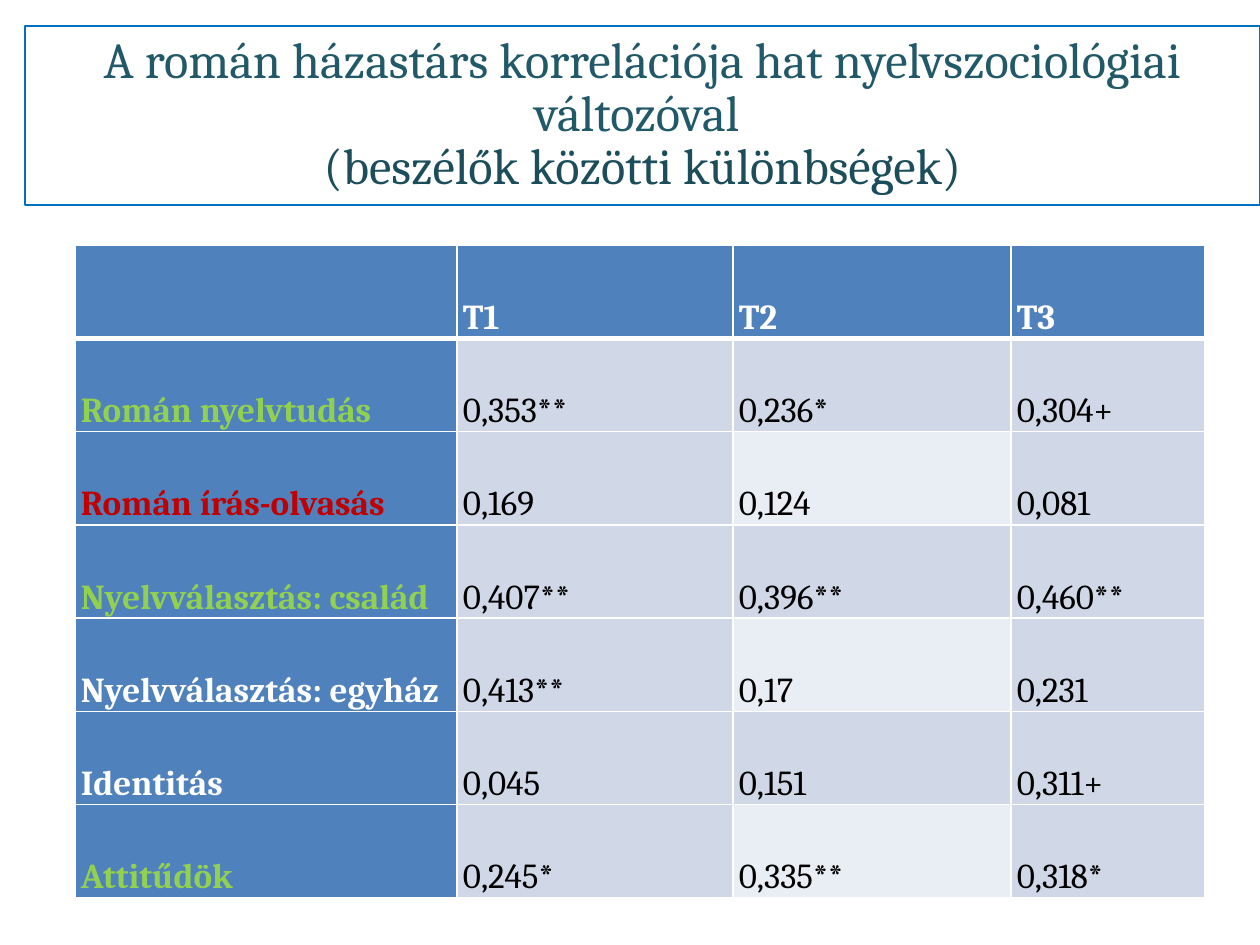
import pptx
import pptx.dml.color
import pptx.enum.text
import pptx.oxml
import pptx.oxml.ns
import pptx.util

SCALE = 914400 / 126
FONT = "Cambria"
COLORS = {
    "title": "215968", "subtitle": "1C4D5A", "outline": "0070C0",
    "head": "4F81BD", "band": "D0D8E8", "light": "E9EDF4",
    "white": "FFFFFF", "black": "000000", "green": "92D050", "red": "C00000",
}
TITLE = ("A román házastárs korrelációja hat nyelvszociológiai változóval ",
         "(beszélők közötti különbségek)")
COLUMN_WIDTHS = (382, 276, 278, 194)
HEADINGS = ("", "T1", "T2", "T3")
CORRELATIONS = (
    ("Román nyelvtudás", "green", "0,353**", "0,236*", "0,304+"),
    ("Román írás-olvasás", "red", "0,169", "0,124", "0,081"),
    ("Nyelvválasztás: család", "green", "0,407**", "0,396**", "0,460**"),
    ("Nyelvválasztás: egyház", "white", "0,413**", "0,17", "0,231"),
    ("Identitás", "white", "0,045", "0,151", "0,311+"),
    ("Attitűdök", "green", "0,245*", "0,335**", "0,318*"),
)
LIGHT_ROWS = (2, 4, 6)


def px(length):
    """Turn a length in px into EMU."""
    return pptx.util.Emu(round(length * SCALE))


def color(name):
    """Look up a named colour."""
    return pptx.dml.color.RGBColor.from_string(COLORS[name])


def assign(target, values):
    """Set each attribute of the target from a dict."""
    for name, value in values.items():
        setattr(target, name, value)


def add_span(para, text, size, shade, bold=False):
    """Append one formatted run to a paragraph."""
    span = para.add_run()
    span.text = text
    assign(span.font, {"name": FONT, "size": pptx.util.Pt(size), "bold": bold})
    span.font.color.rgb = color(shade)


def place_title(page, left, top, width, height):
    """Fill and outline the title placeholder."""
    box = page.shapes.title
    assign(box, {"left": px(left), "top": px(top),
                 "width": px(width), "height": px(height)})
    box.line.color.rgb = color("outline")
    box.line.width = pptx.util.Pt(0.75)
    assign(box.text_frame, {
        "word_wrap": True,
        "auto_size": pptx.enum.text.MSO_AUTO_SIZE.NONE,
        "vertical_anchor": pptx.enum.text.MSO_ANCHOR.MIDDLE,
    })
    para = box.text_frame.paragraphs[0]
    assign(para, {"alignment": pptx.enum.text.PP_ALIGN.CENTER, "line_spacing": 0.88})
    add_span(para, TITLE[0], 28.8, "title")
    para.add_line_break()
    add_span(para, TITLE[1], 28.8, "subtitle")


def add_borders(cell, widths):
    """Draw white cell borders with the given widths in points by side."""
    properties = cell._tc.get_or_add_tcPr()
    for index, (side, width) in enumerate(widths.items()):
        border = pptx.oxml.parse_xml(
            f'<a:ln{side} {pptx.oxml.ns.nsdecls("a")} w="{pptx.util.Pt(width)}">'
            f'<a:solidFill><a:srgbClr val="{COLORS["white"]}"/></a:solidFill>'
            f'</a:ln{side}>')
        properties.insert(index, border)


def format_cell(cell, text, fill, shade, bold, top, bottom):
    """Write one table cell with its fill, margins and borders."""
    assign(cell, {
        "margin_left": px(6), "margin_right": px(6),
        "margin_top": 0, "margin_bottom": 0,
        "vertical_anchor": pptx.enum.text.MSO_ANCHOR.BOTTOM,
    })
    cell.fill.solid()
    cell.fill.fore_color.rgb = color(fill)
    add_borders(cell, {"L": 1, "R": 1, "T": top, "B": bottom})
    if text:
        para = cell.text_frame.paragraphs[0]
        para.line_spacing = 1.15
        add_span(para, text, 20, shade, bold)


def place_table(page, left, top, height):
    """Add the correlation table."""
    frame = page.shapes.add_table(
        len(CORRELATIONS) + 1, len(HEADINGS),
        px(left), px(top), px(sum(COLUMN_WIDTHS)), px(height))
    table = frame.table
    for column, width in zip(table.columns, COLUMN_WIDTHS):
        column.width = px(width)
    for index, heading in enumerate(HEADINGS):
        format_cell(table.cell(0, index), heading, "head", "white", True, 1, 3)
    for row, (label, shade, *values) in enumerate(CORRELATIONS, 1):
        upper = 3 if row == 1 else 1
        format_cell(table.cell(row, 0), label, "head", shade, True, upper, 1)
        for index, value in enumerate(values, 1):
            fill = "light" if index == 2 and row in LIGHT_ROWS else "band"
            format_cell(table.cell(row, index), value, fill, "black", False, upper, 1)


def main():
    """Build and save the deck."""
    deck = pptx.Presentation()
    assign(deck, {"slide_width": px(1260), "slide_height": px(945)})
    page = deck.slides.add_slide(deck.slide_layouts[5])
    place_title(page, 25, 26, 1235, 179)
    place_table(page, 75, 245, 653)
    deck.save("out.pptx")


if __name__ == "__main__":
    main()
